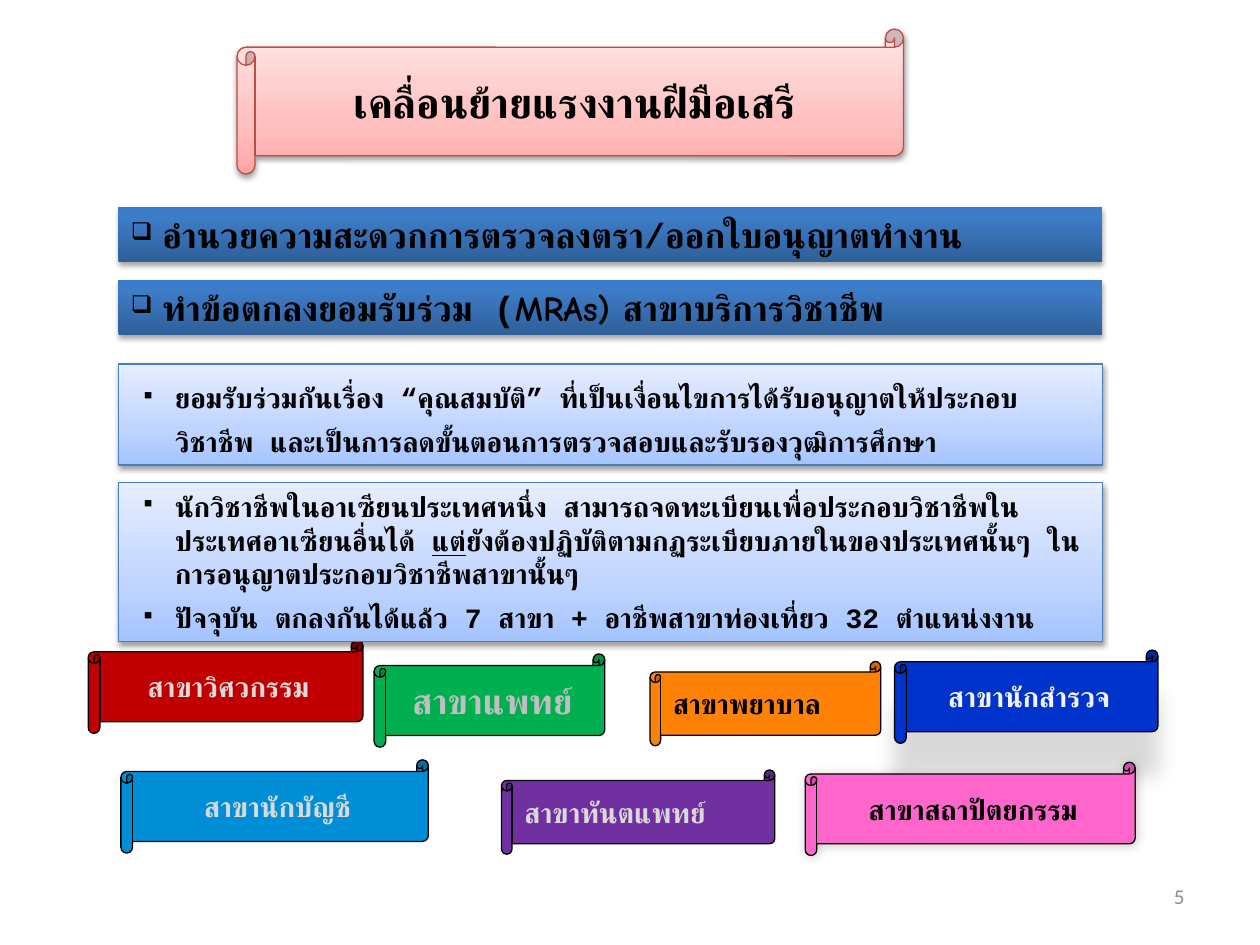
from lxml import etree
from pptx import Presentation
from pptx import util as u
from pptx.dml.color import RGBColor
from pptx.enum import lang, shapes, text
from pptx.oxml import ns

COLORS = {
    "black": "000000", "white": "F2F2F2", "pale": "D9D9D9", "silver": "BFBFBF",
    "gray": "8C8C8C", "rose line": "BF4C48", "blue line": "4B7EBC",
    "red": "C00000", "green": "00B050", "orange": "FF8205", "navy": "0033CC",
    "sky": "008FD6", "purple": "7030A0", "pink": "FF66CC",
}
GRADIENTS = {
    "rose": [(0, "FFA6A5"), (35, "FFC0BF"), (100, "FFE7E7")],
    "steel": [(0, "2F5F99"), (80, "3D7CC7"), (100, "3A7CCB")],
    "ice": [(0, "A4C4FF"), (35, "BFD4FF"), (100, "E6EEFF")],
}
# opacity %, blur pt, distance pt, angle
SOFT_SHADOW = (38, 3.1, 1.6, 90)
BAR_SHADOW = (35, 3.1, 1.8, 90)
FONT = "Courier New"
BODY_LEFT, BODY_WIDTH = 67.7, 562.3


def add_node(parent, tag, **attributes):
    node = etree.SubElement(parent, ns.qn(tag))
    for name, value in attributes.items():
        node.set(name, str(value))
    return node


def add_text(paragraph, words, size=16, font=FONT, color="black", bold=True, underline=None):
    run = paragraph.add_run()
    run.text = words
    run.font.size = u.Pt(size)
    run.font.name = font
    run.font.bold = bold
    run.font.underline = underline
    run.font.language_id = lang.MSO_LANGUAGE_ID.THAI
    run.font.color.rgb = RGBColor.from_string(COLORS[color])
    # Thai letters take the complex-script font
    add_node(run.font._element, "a:cs", typeface=font)


def add_bullet(paragraph, character, margin, hanging):
    properties = paragraph._p.get_or_add_pPr()
    properties.set("marL", str(u.Pt(margin)))
    properties.set("indent", str(-u.Pt(hanging)))
    add_node(properties, "a:buSzPct", val=70000)
    add_node(properties, "a:buChar", char=character)


class SlideBuilder:
    def __init__(self, slide):
        self.slide = slide

    def panel(self, kind, box, fill, line=None, shadow=None):
        shape = self.slide.shapes.add_shape(kind, *(u.Pt(length) for length in box))
        if fill in GRADIENTS:
            self.gradient(shape, GRADIENTS[fill])
        else:
            shape.fill.solid()
            shape.fill.fore_color.rgb = RGBColor.from_string(COLORS[fill])
        if line:
            shape.line.color.rgb = RGBColor.from_string(COLORS[line])
            shape.line.width = u.Pt(0.75)
        else:
            shape.line.fill.background()
        shape.shadow.inherit = False
        if shadow:
            self.shadow(shape, *shadow)
        shape.text_frame.vertical_anchor = text.MSO_ANCHOR.MIDDLE
        return shape

    def gradient(self, shape, stops):
        """Fill from the bottom edge up to the top edge."""
        shape.fill.gradient()
        shape.fill.gradient_angle = 90
        stop_list = shape._element.spPr.find(".//" + ns.qn("a:gsLst"))
        for old_stop in list(stop_list):
            stop_list.remove(old_stop)
        for position, color in stops:
            stop = add_node(stop_list, "a:gs", pos=position * 1000)
            add_node(stop, "a:srgbClr", val=color)

    def shadow(self, shape, opacity, blur, distance, angle):
        effects = shape._element.spPr.find(ns.qn("a:effectLst"))
        outer = add_node(effects, "a:outerShdw", blurRad=u.Pt(blur), dist=u.Pt(distance),
                         dir=angle * 60000, rotWithShape=0)
        color = add_node(outer, "a:srgbClr", val=COLORS["black"])
        add_node(color, "a:alpha", val=opacity * 1000)

    def scroll(self, words, box, fill, line="black", shadow=None, centered=True, **text_format):
        shape = self.panel(shapes.MSO_SHAPE.HORIZONTAL_SCROLL, box, fill, line, shadow)
        shape.text_frame.word_wrap = False
        paragraph = shape.text_frame.paragraphs[0]
        paragraph.alignment = text.PP_ALIGN.CENTER if centered else text.PP_ALIGN.LEFT
        add_text(paragraph, words, **text_format)

    def heading_bar(self, top, runs):
        box = (BODY_LEFT, top, BODY_WIDTH, 31.7)
        shape = self.panel(shapes.MSO_SHAPE.RECTANGLE, box, "steel", shadow=BAR_SHADOW)
        paragraph = shape.text_frame.paragraphs[0]
        paragraph.alignment = text.PP_ALIGN.LEFT
        add_bullet(paragraph, "❑", 18, 18)
        for words, font in runs:
            add_text(paragraph, words, size=20, font=font)

    def bullet_box(self, top, height, bullets, line_spacing=None):
        """Each bullet is a list of (words, underlined) runs."""
        box = (BODY_LEFT, top, BODY_WIDTH, height)
        shape = self.panel(shapes.MSO_SHAPE.RECTANGLE, box, "ice", "blue line", SOFT_SHADOW)
        frame = shape.text_frame
        frame.word_wrap = True
        for index, runs in enumerate(bullets):
            paragraph = frame.add_paragraph() if index else frame.paragraphs[0]
            paragraph.alignment = text.PP_ALIGN.LEFT
            paragraph.space_before = u.Pt(6)
            if line_spacing:
                paragraph.line_spacing = u.Pt(line_spacing)
            add_bullet(paragraph, "▪", 25.2, 19.5)
            for words, underlined in runs:
                add_text(paragraph, words, underline=underlined)

    def page_number(self, number, box):
        frame = self.slide.shapes.add_textbox(*(u.Pt(length) for length in box)).text_frame
        frame.word_wrap = True
        frame.vertical_anchor = text.MSO_ANCHOR.MIDDLE
        frame.paragraphs[0].alignment = text.PP_ALIGN.RIGHT
        add_text(frame.paragraphs[0], number, size=12, font="Calibri", color="gray", bold=False)


def main():
    presentation = Presentation()
    presentation.slide_width, presentation.slide_height = u.Pt(720), u.Pt(540)
    builder = SlideBuilder(presentation.slides.add_slide(presentation.slide_layouts[6]))

    builder.scroll("เคลื่อนย้ายแรงงานฝีมือเสรี", (135.4, 16.6, 380.9, 82.8), "rose",
                   "rose line", SOFT_SHADOW, size=24)
    builder.heading_bar(118.1, [("อำนวยความสะดวกการตรวจลงตรา/ออกใบอนุญาตทำงาน", FONT)])
    builder.heading_bar(159.8, [("ทำข้อตกลงยอมรับร่วม (", FONT), ("MRAs) ", "Comic Neue"),
                                ("สาขาบริการวิชาชีพ", FONT)])

    builder.scroll("สาขาทันตแพทย์", (286.6, 440, 156.2, 48.2), "purple",
                   centered=False, color="pale")
    builder.scroll("สาขาพยาบาล", (371.5, 378, 131.8, 48.2), "orange", centered=False)
    builder.scroll("สาขาวิศวกรรม", (50.4, 365.8, 157, 53.3), "red", color="pale")
    builder.scroll("สาขานักบัญชี", (69.1, 434.2, 175.7, 53.3), "sky", color="pale")
    builder.scroll("สาขาแพทย์", (213.8, 373.7, 131.8, 53.3), "green",
                   size=20, font="Lato", color="silver")
    builder.scroll("สาขานักสำรวจ", (511.2, 371.5, 150.5, 53.3), "navy",
                   shadow=(15, 12, 25, 90), color="white")
    builder.scroll("สาขาสถาปัตยกรรม", (460.1, 435.6, 188.6, 53.3), "pink",
                   shadow=(20, 6, 1, 45))

    builder.bullet_box(208.1, 57.6, [
        [("ยอมรับร่วมกันเรื่อง “คุณสมบัติ” ที่เป็นเงื่อนไขการได้รับอนุญาตให้ประกอบวิชาชีพ "
          "และเป็นการลดขั้นตอนการตรวจสอบและรับรองวุฒิการศึกษา", False)],
    ], line_spacing=25)
    builder.bullet_box(275.8, 90.7, [
        [("นักวิชาชีพในอาเซียนประเทศหนึ่ง สามารถจดทะเบียนเพื่อประกอบวิชาชีพใน"
          "ประเทศอาเซียนอื่นได้ ", False),
         ("แต่", True),
         ("ยังต้องปฏิบัติตามกฏระเบียบภายในของประเทศนั้นๆ "
          "ในการอนุญาตประกอบวิชาชีพสาขานั้นๆ", False)],
        [("ปัจจุบัน ตกลงกันได้แล้ว 7 สาขา + อาชีพสาขาท่องเที่ยว 32 ตำแหน่งงาน", False)],
    ])
    builder.page_number("5", (545.8, 495.4, 138.2, 33.1))
    presentation.save("out.pptx")


if __name__ == "__main__":
    main()
